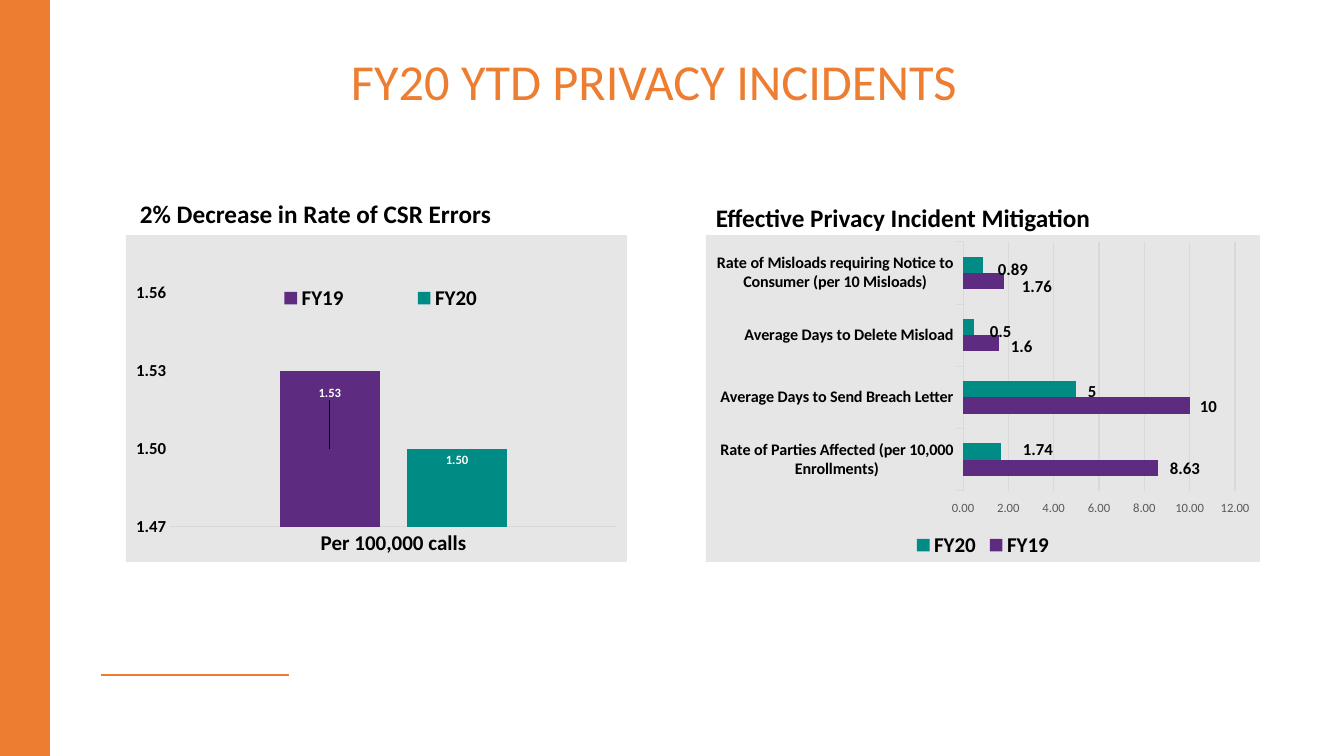
import pptx
import pptx.chart.data
import pptx.dml.color
import pptx.enum.chart
import pptx.enum.shapes
import pptx.enum.text
import pptx.oxml
import pptx.oxml.ns
import pptx.util

PX = 914400 / 100.8
FONT = "Calibri"
COLORS = {"orange": "ED7D31", "purple": "5D2C80", "teal": "008C84", "panel": "E7E6E6",
          "rule": "D9D9D9", "grey": "595959", "black": "000000", "white": "FFFFFF"}
SERIES_COLORS = {"FY19": "purple", "FY20": "teal"}
CHART = pptx.enum.chart
CHART_NS = pptx.oxml.ns.nsdecls("c")


def emu(*lengths):
    return [round(length * PX) for length in lengths]


def rgb(name):
    return pptx.dml.color.RGBColor.from_string(COLORS[name])


def style_font(font, size, color="black", bold=True):
    font.name, font.size, font.bold = FONT, pptx.util.Pt(size), bold
    font.color.rgb = rgb(color)


def add_text(slide, text, box, size=12, color="black", bold=True,
             anchor=pptx.enum.text.MSO_ANCHOR.TOP, spacing=None):
    frame = slide.shapes.add_textbox(*emu(*box)).text_frame
    frame.word_wrap = True
    frame.vertical_anchor = anchor
    paragraph = frame.paragraphs[0]
    paragraph.line_spacing = spacing
    run = paragraph.add_run()
    run.text = text
    style_font(run.font, size, color, bold)


def add_side_band(slide):
    band = slide.shapes.add_shape(pptx.enum.shapes.MSO_SHAPE.RECTANGLE, *emu(0, 0, 50, 756))
    band.shadow.inherit = False
    band.fill.solid()
    band.fill.fore_color.rgb = rgb("orange")
    band.line.fill.background()


def add_rule(slide):
    rule = slide.shapes.add_connector(pptx.enum.shapes.MSO_CONNECTOR.STRAIGHT,
                                      *emu(101, 675, 289, 675))
    rule.line.color.rgb = rgb("orange")
    rule.line.width = pptx.util.Pt(2)
    rule._element.spPr.append(pptx.oxml.parse_xml(f"<a:effectLst {pptx.oxml.ns.nsdecls('a')}/>"))


def manual_layout(frame, area, inner=False):
    """Layout element that places area (slide px) within the chart frame."""
    left, top, width, height = frame
    x, y, w, h = area
    target = '<c:layoutTarget val="inner"/>' if inner else ""
    return pptx.oxml.parse_xml(
        f'<c:layout {CHART_NS}><c:manualLayout>{target}'
        f'<c:xMode val="edge"/><c:yMode val="edge"/>'
        f'<c:x val="{(x - left) / width:.3f}"/><c:y val="{(y - top) / height:.3f}"/>'
        f'<c:w val="{w / width:.3f}"/><c:h val="{h / height:.3f}"/>'
        f'</c:manualLayout></c:layout>')


def remove_children(parent, tag):
    for child in parent.findall(pptx.oxml.ns.qn(tag)):
        parent.remove(child)


def style_axis(axis, tick, size, color="black", bold=True):
    axis.major_tick_mark = tick
    axis.minor_tick_mark = CHART.XL_TICK_MARK.NONE
    axis.has_major_gridlines = False
    style_font(axis.tick_labels.font, size, color, bold)


def style_rule(line):
    line.color.rgb = rgb("rule")
    line.width = pptx.util.Pt(0.75)


def add_bar_chart(slide, kind, frame, plot_area, categories, series, gap, overlap, tick,
                  category_size, value_range, value_step, legend_position):
    data = pptx.chart.data.CategoryChartData()
    data.categories = categories
    for name, values in series.items():
        data.add_series(name, values)
    chart = slide.shapes.add_chart(kind, *emu(*frame), data).chart
    style_font(chart.font, 10, bold=False)
    chart.has_title = False

    # Panel background and plot position
    space = chart._chartSpace
    space.chart.addnext(pptx.oxml.parse_xml(
        f'<c:spPr {CHART_NS} {pptx.oxml.ns.nsdecls("a")}><a:solidFill>'
        f'<a:srgbClr val="{COLORS["panel"]}"/></a:solidFill><a:ln><a:noFill/></a:ln></c:spPr>'))
    plot_xml = space.chart.plotArea
    remove_children(plot_xml, "c:layout")
    plot_xml.insert(0, manual_layout(frame, plot_area, inner=True))

    # Bars
    plot = chart.plots[0]
    plot.vary_by_categories = False
    plot.gap_width, plot.overlap = gap, overlap
    for bars in plot.series:
        bars.format.fill.solid()
        bars.format.fill.fore_color.rgb = rgb(SERIES_COLORS[bars.name])

    # Axes
    style_axis(chart.category_axis, tick, category_size)
    style_rule(chart.category_axis.format.line)
    values = chart.value_axis
    style_axis(values, tick, 12)
    values.format.line.fill.background()
    values.minimum_scale, values.maximum_scale = value_range
    values.major_unit = value_step
    values.tick_labels.number_format = "0.00"
    values.tick_labels.number_format_is_linked = False

    # Legend
    chart.has_legend = True
    chart.legend.position = legend_position
    chart.legend.include_in_layout = False
    style_font(chart.legend.font, 15)
    return chart


def add_error_rate_chart(slide):
    frame = (126, 235, 501, 327)
    chart = add_bar_chart(
        slide, CHART.XL_CHART_TYPE.COLUMN_CLUSTERED, frame, (170, 293, 447, 234),
        ["Per 100,000 calls"], {"FY19": [1.53], "FY20": [1.5]}, 219, -27,
        CHART.XL_TICK_MARK.NONE, 15, (1.47, 1.56), 0.03, CHART.XL_LEGEND_POSITION.TOP)
    legend = chart.legend._element
    remove_children(legend, "c:layout")
    legend.find(pptx.oxml.ns.qn("c:legendPos")).addnext(
        manual_layout(frame, (217, 282, 327, 32)))

    positions = (CHART.XL_LABEL_POSITION.CENTER, CHART.XL_LABEL_POSITION.INSIDE_END)
    for bars, position in zip(chart.plots[0].series, positions):
        labels = bars.data_labels
        labels.show_value = True
        labels.position = position
        labels.number_format, labels.number_format_is_linked = "0.00", False
        style_font(labels.font, 9, "white")
        remove_children(labels._element, "c:showLeaderLines")

    # Raise the FY19 label from the bar's centre
    raised = chart.plots[0].series[0].points[0].data_label
    style_font(raised.font, 9, "white")
    raised.position = CHART.XL_LABEL_POSITION.CENTER
    raised._dLbl.find(pptx.oxml.ns.qn("c:idx")).addnext(pptx.oxml.parse_xml(
        f'<c:layout {CHART_NS}><c:manualLayout><c:x val="0"/><c:y val="-0.17"/>'
        f'</c:manualLayout></c:layout>'))


def add_mitigation_chart(slide):
    chart = add_bar_chart(
        slide, CHART.XL_CHART_TYPE.BAR_CLUSTERED, (706, 235, 554, 327), (963, 242, 272, 249),
        ["Rate of Parties Affected (per 10,000 Enrollments)",
         "Average Days to Send Breach Letter",
         "Average Days to Delete Misload",
         "Rate of Misloads requiring Notice to Consumer (per 10 Misloads)"],
        {"FY19": [8.6, 10, 1.6, 1.8], "FY20": [1.7, 5, 0.5, 0.9]}, 182, 0,
        CHART.XL_TICK_MARK.OUTSIDE, 11.5, (0, 12), 2, CHART.XL_LEGEND_POSITION.BOTTOM)
    style_font(chart.value_axis.tick_labels.font, 9, "grey", bold=False)
    chart.value_axis.has_major_gridlines = True
    style_rule(chart.value_axis.major_gridlines.format.line)

    # Values beside the bars
    for text, left, top, width in [
            ("1.76", 1012, 271, 64), ("0.89", 988, 254, 64),
            ("1.6", 1001, 331, 64), ("0.5", 980, 316, 64),
            ("10", 1190, 391, 55), ("5", 1078, 376, 33),
            ("8.63", 1160, 453, 55), ("1.74", 1013, 434, 77)]:
        add_text(slide, text, (left, top, width, 30))


def main():
    deck = pptx.Presentation()
    deck.slide_width, deck.slide_height = emu(1344, 756)
    slide = deck.slides.add_slide(deck.slide_layouts[6])

    # Frame and headings
    add_rule(slide)
    add_side_band(slide)
    add_text(slide, "FY20 YTD PRIVACY INCIDENTS", (341, 40, 780, 76), size=36, color="orange",
             bold=False, anchor=pptx.enum.text.MSO_ANCHOR.BOTTOM, spacing=0.9)
    add_text(slide, "2% Decrease in Rate of CSR Errors", (130, 193, 397, 40), size=18)
    add_text(slide, "Effective Privacy Incident Mitigation", (706, 197, 404, 40), size=18)

    # Charts
    add_error_rate_chart(slide)
    add_mitigation_chart(slide)
    deck.save("out.pptx")


if __name__ == "__main__":
    main()
